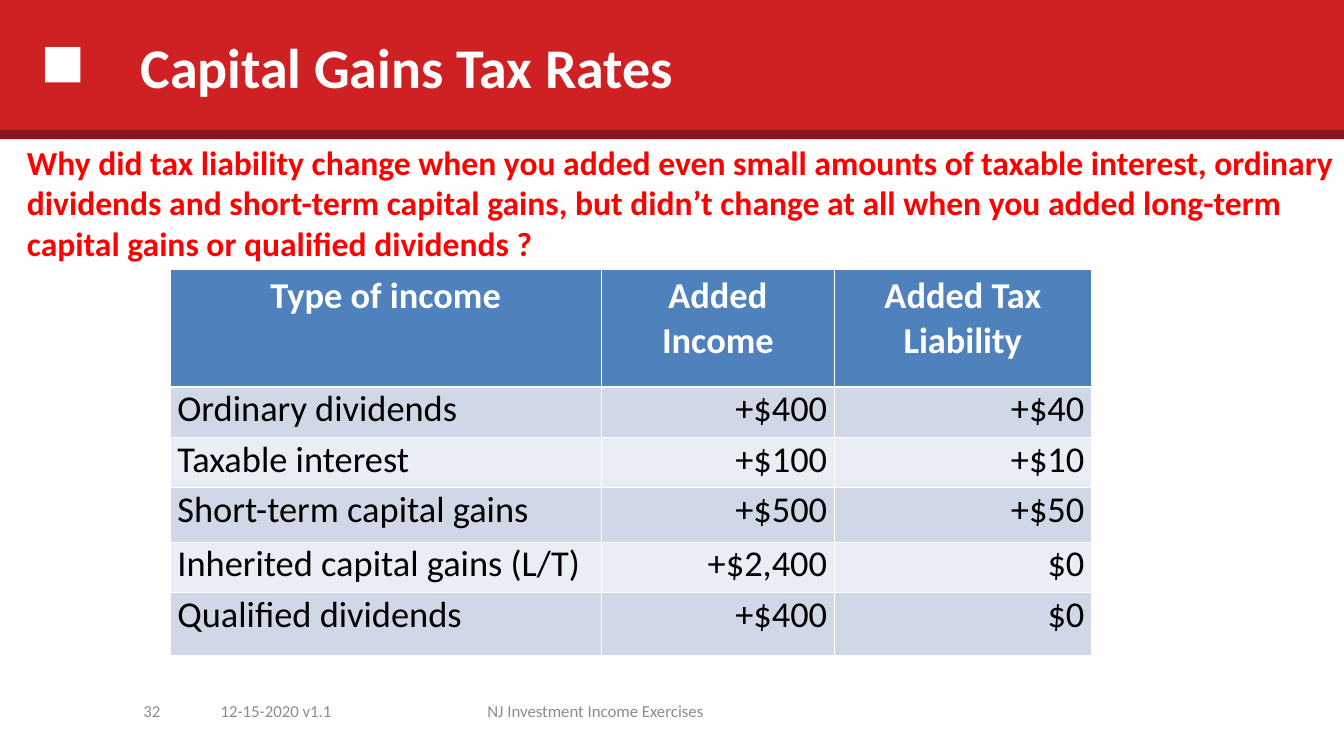
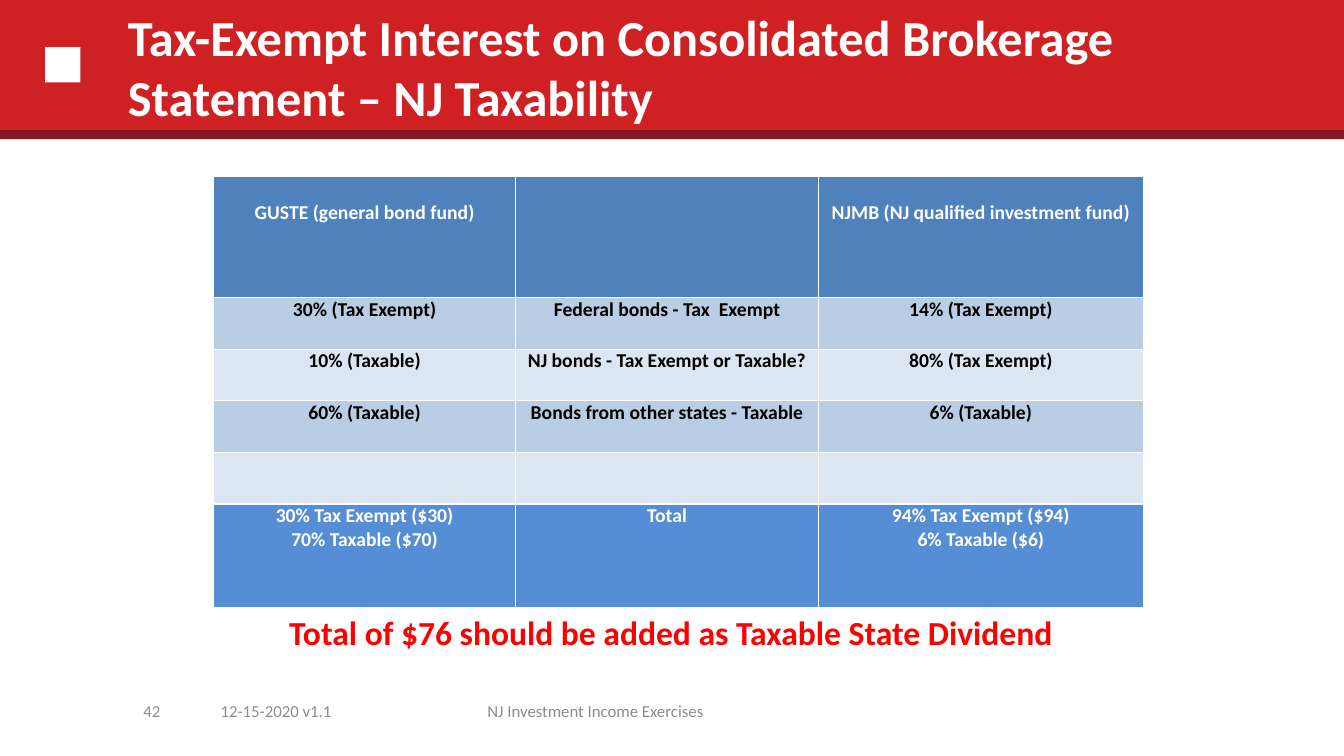
import pptx
import pptx.util
import pptx.dml.color
import pptx.enum.shapes
import pptx.enum.text

Cm = pptx.util.Cm
ALIGN = pptx.enum.text.PP_ALIGN
ANCHOR = pptx.enum.text.MSO_ANCHOR

FONT = "Calibri"
WHITE, BLACK = "FFFFFF", "000000"
BAND, STRIPE = "CF2124", "841721"
NOTE, FOOTER = "FF0000", "8C8C8C"
HEADER, TOTAL = "4F81BD", "558ED5"
PALE_BANDS = ("D0D8E8", "E9EDF4")
BLUE_BANDS = ("B9CDE5", "DCE6F2")

TITLE_BOX = (2.97, 0.08, 27.08, 3.18)
BAND_PARTS = (
    ((0, 0, 33.87, 3.35), BAND),
    ((1.14, 1.19, 0.89, 0.89), WHITE),
    ((0, 3.28, 33.87, 0.23), STRIPE),
)
FOOTER_TOP, FOOTER_HEIGHT = 17.4, 1.02


def colour(value):
    return pptx.dml.color.RGBColor.from_string(value)


def lengths(box):
    return [Cm(value) for value in box]


def style(frame, size, text_colour, bold=False, align=ALIGN.LEFT):
    for para in frame.paragraphs:
        para.alignment = align
        para.font.name = FONT
        para.font.size = pptx.util.Pt(size)
        para.font.bold = bold
        para.font.color.rgb = colour(text_colour)


def add_text(page, box, text, size, text_colour, bold=False,
             align=ALIGN.LEFT, anchor=ANCHOR.TOP):
    frame = page.shapes.add_textbox(*lengths(box)).text_frame
    frame.word_wrap = True
    frame.vertical_anchor = anchor
    frame.text = text
    style(frame, size, text_colour, bold, align)
    return frame


def add_bands(page, layout):
    first = layout.placeholders[0].element
    for number, (box, fill) in enumerate(BAND_PARTS, 101):
        shape = page.shapes.add_shape(
            pptx.enum.shapes.MSO_SHAPE.RECTANGLE, *lengths(box))
        shape.shadow.inherit = False
        shape.fill.solid()
        shape.fill.fore_color.rgb = colour(fill)
        shape.line.fill.background()
        shape.element.nvSpPr.cNvPr.set("id", str(number))
        first.addprevious(shape.element)


def add_title(page, text, size, indent):
    title = page.shapes.title
    title.left, title.top, title.width, title.height = lengths(TITLE_BOX)
    frame = title.text_frame
    frame.text = text
    frame.word_wrap = True
    frame.auto_size = pptx.enum.text.MSO_AUTO_SIZE.NONE
    frame.vertical_anchor = ANCHOR.MIDDLE
    frame.margin_left = Cm(indent)
    style(frame, size, WHITE, True)


def add_footer(page, number):
    parts = (
        (1.7, 2.59, number, ALIGN.RIGHT),
        (5.31, 3.71, "12-15-2020 v1.1", ALIGN.LEFT),
        (9.65, 10.72, "NJ Investment Income Exercises", ALIGN.CENTER),
    )
    for left, width, text, align in parts:
        add_text(page, (left, FOOTER_TOP, width, FOOTER_HEIGHT), text, 12,
                 FOOTER, align=align, anchor=ANCHOR.MIDDLE)


def add_grid(page, left, top, widths, heights, rows, size, look):
    box = lengths((left, top, sum(widths), sum(heights)))
    table = page.shapes.add_table(len(rows), len(widths), *box).table
    for column, width in zip(table.columns, widths):
        column.width = Cm(width)
    for index, (row, height, texts) in enumerate(
            zip(table.rows, heights, rows)):
        row.height = Cm(height)
        fill, text_colour, bold, aligns, side, above = look(index)
        for cell, text, align in zip(row.cells, texts, aligns):
            cell.fill.solid()
            cell.fill.fore_color.rgb = colour(fill)
            cell.margin_left = cell.margin_right = Cm(side)
            cell.margin_top = Cm(above)
            cell.margin_bottom = 0
            cell.text = text
            style(cell.text_frame, size, text_colour, bold, align)


def rates_look(index):
    if index == 0:
        return HEADER, WHITE, True, [ALIGN.CENTER] * 3, 0.25, 0.13
    aligns = (ALIGN.LEFT, ALIGN.RIGHT, ALIGN.RIGHT)
    return PALE_BANDS[(index - 1) % 2], BLACK, False, aligns, 0.18, 0


def bonds_look(index):
    centred = [ALIGN.CENTER] * 3
    if index == 0:
        return HEADER, WHITE, True, centred, 0.18, 0.6
    if index == 5:
        return TOTAL, WHITE, True, centred, 0.18, 0
    return BLUE_BANDS[(index - 1) % 2], BLACK, True, centred, 0.18, 0


def fill_rates(page):
    add_title(page, "Capital Gains Tax Rates", 40, 0.57)
    question = (
        "Why did tax liability change when you added even small amounts of "
        "taxable interest, ordinary dividends and short-term capital gains, "
        "but didn’t change at all when you added long-term capital gains or "
        "qualified dividends ?")
    frame = add_text(page, (0.43, 3.45, 33.44, 3.33), question, 24, NOTE, True)
    frame.margin_right = 0
    rows = (
        ("Type of income", "Added Income", "Added Tax Liability"),
        ("Ordinary dividends", "+$400", "+$40"),
        ("Taxable interest", "+$100", "+$10"),
        ("Short-term capital gains", "+$500", "+$50"),
        ("Inherited capital gains (L/T)", "+$2,400", "$0"),
        ("Qualified dividends", "+$400", "$0"),
    )
    add_grid(page, 4.29, 6.78, (10.87, 5.87, 6.48),
             (2.97, 1.27, 1.27, 1.37, 1.27, 1.6), rows, 26, rates_look)
    add_footer(page, "32")


def fill_bonds(page):
    add_title(page, "Tax-Exempt Interest on Consolidated Brokerage "
              "Statement – NJ Taxability", 36, 0.25)
    rows = (
        ("GUSTE (general bond fund)", "",
         "NJMB (NJ qualified investment fund)"),
        ("30% (Tax Exempt)", "Federal bonds - Tax  Exempt",
         "14% (Tax Exempt)"),
        ("10% (Taxable)", "NJ bonds - Tax Exempt or Taxable?",
         "80% (Tax Exempt)"),
        ("60% (Taxable)", "Bonds from other states - Taxable",
         "6% (Taxable)"),
        ("", "", ""),
        ("30% Tax Exempt ($30)\n70% Taxable ($70)", "Total",
         "94% Tax Exempt ($94)\n6% Taxable ($6)"),
    )
    add_grid(page, 5.38, 4.45, (7.62, 7.62, 8.2),
             (3.05, 1.3, 1.3, 1.3, 1.3, 2.6), rows, 14, bonds_look)
    add_text(page, (7.04, 15.29, 20.62, 1.27),
             "Total of $76 should be added as Taxable State Dividend",
             24, NOTE, True)
    add_footer(page, "42")


def main():
    deck = pptx.Presentation()
    deck.slide_width, deck.slide_height = Cm(33.87), Cm(19.05)
    layout = deck.slide_layouts[5]
    pages = [deck.slides.add_slide(layout) for _ in range(2)]
    add_bands(pages[0], layout)
    fill_rates(pages[0])
    fill_bonds(pages[1])
    deck.save("out.pptx")


if __name__ == "__main__":
    main()
